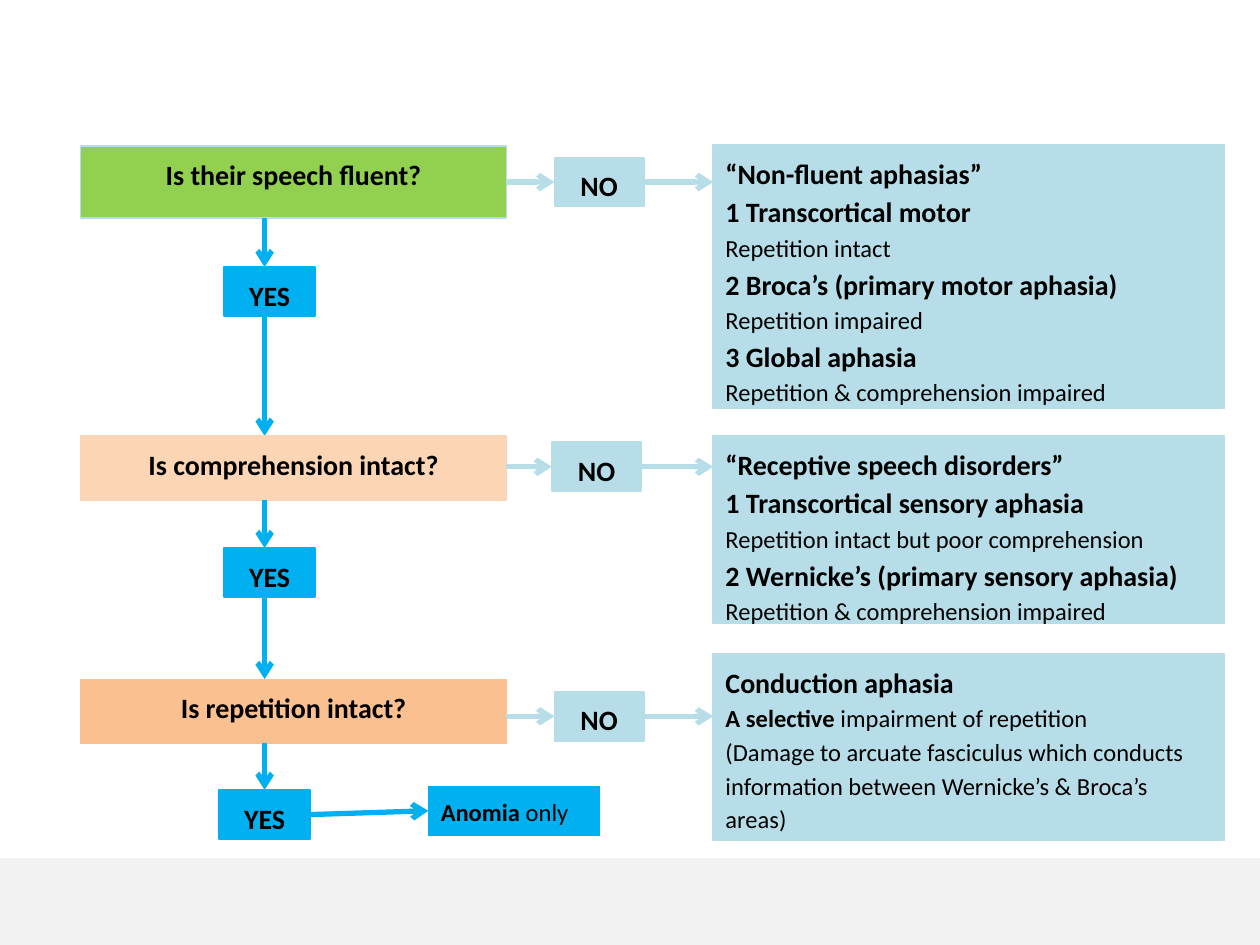
from dataclasses import dataclass

from lxml import etree
from pptx import Presentation
from pptx.dml.color import RGBColor
from pptx.enum import shapes, text
from pptx.oxml import ns
from pptx.util import Inches, Pt


@dataclass(frozen=True)
class Theme:
    font: str = "Calibri"
    ink: str = "000000"
    band: str = "F2F2F2"
    no: str = "B7DEE8"
    yes: str = "00B0F0"
    head: int = 16
    detail: int = 14
    arrow: int = 3
    spacing: float = 1.15


THEME = Theme()
TOP, LEFT, RIGHT = 0, 1, 3
QUESTION_X, QUESTION_W = 0.64, 3.38
OUTCOME_X, OUTCOME_W = 5.66, 4.06
NO_W, YES_W, ANSWER_H = 0.71, 0.72, 0.39
SPINE_X = 2.1


def head(words):
    return [(words, THEME.head, True)]


def detail(words):
    return [(words, THEME.detail, False)]


# text, top, height, fill, line, NO left, NO top, YES left, YES top
QUESTIONS = [
    ("Is their speech fluent?", 1.16, 0.57, "92D050", THEME.no, 4.4, 1.25, 1.78, 2.12),
    ("Is comprehension intact?", 3.46, 0.51, "FCD5B5", "FCD5B5", 4.38, 3.51, 1.78, 4.35),
    ("Is repetition intact?", 5.39, 0.51, "FAC090", "FAC090", 4.4, 5.49, 1.74, 6.27),
]

# top, height, paragraphs
OUTCOMES = [
    (1.15, 2.09, [
        head("“Non-fluent aphasias”"),
        head("1 Transcortical motor"),
        detail("Repetition intact"),
        head("2 Broca’s (primary motor aphasia)"),
        detail("Repetition impaired"),
        head("3 Global aphasia"),
        detail("Repetition & comprehension impaired"),
    ]),
    (3.46, 1.49, [
        head("“Receptive speech disorders”"),
        head("1 Transcortical sensory aphasia"),
        detail("Repetition intact but poor comprehension"),
        head("2 Wernicke’s (primary sensory aphasia)"),
        detail("Repetition & comprehension impaired"),
    ]),
    (5.19, 1.48, [
        head("Conduction aphasia"),
        [("A selective ", THEME.detail, True),
         ("impairment of repetition", THEME.detail, False)],
        detail("(Damage to arcuate fasciculus which conducts information "
               "between Wernicke’s & Broca’s areas)"),
    ]),
]


def rgb(value):
    return RGBColor.from_string(value)


def add_box(s, box, fill, paragraphs=(), line=None, width=0.75, centred=False):
    """Add a filled rectangle; each paragraph is a list of (text, size, bold)."""
    sp = s.shapes.add_shape(shapes.MSO_SHAPE.RECTANGLE, *map(Inches, box))
    sp.shadow.inherit = False
    sp.fill.solid()
    sp.fill.fore_color.rgb = rgb(fill)
    sp.line.color.rgb = rgb(line or fill)
    sp.line.width = Pt(width)
    tf = sp.text_frame
    tf.word_wrap = True
    tf.vertical_anchor = text.MSO_ANCHOR.TOP
    for i, runs in enumerate(paragraphs):
        p = tf.add_paragraph() if i else tf.paragraphs[0]
        p.alignment = text.PP_ALIGN.CENTER if centred else text.PP_ALIGN.LEFT
        p.line_spacing = THEME.spacing
        for words, size, bold in runs:
            r = p.add_run()
            r.text = words
            r.font.color.rgb = rgb(THEME.ink)
            style = {"name": THEME.font, "size": Pt(size), "bold": bold}
            for name, value in style.items():
                setattr(r.font, name, value)
    return sp


def add_arrow(s, start, end, color, begin_at=None, end_at=None):
    """Add an arrow; begin_at and end_at are (shape, side) joins."""
    c = s.shapes.add_connector(shapes.MSO_CONNECTOR.STRAIGHT,
                               *map(Inches, (*start, *end)))
    c.line.color.rgb = rgb(color)
    c.line.width = Pt(THEME.arrow)
    etree.SubElement(c.line._get_or_add_ln(), ns.qn("a:tailEnd"), type="arrow")
    etree.SubElement(c._element.spPr, ns.qn("a:effectLst"))
    if begin_at:
        c.begin_connect(*begin_at)
    if end_at:
        c.end_connect(*end_at)


def add_answer(s, words, x, y, w, color):
    return add_box(s, (x, y, w, ANSWER_H), color, [head(words)], width=1, centred=True)


def add_no_branch(s, x, y):
    no = add_answer(s, "NO", x, y, NO_W, THEME.no)
    middle = y + ANSWER_H / 2
    add_arrow(s, (QUESTION_X + QUESTION_W, middle), (x, middle), THEME.no,
              end_at=(no, LEFT))
    add_arrow(s, (x + NO_W, middle), (OUTCOME_X, middle), THEME.no,
              begin_at=(no, RIGHT))


def add_yes_branch(s, x, y, question_bottom, next_top):
    """Add YES below its question and, if there is one, lead to the next."""
    yes = add_answer(s, "YES", x, y, YES_W, THEME.yes)
    on_spine = abs(x + YES_W / 2 - SPINE_X) < 0.01
    add_arrow(s, (SPINE_X, question_bottom), (SPINE_X, y), THEME.yes,
              end_at=(yes, TOP) if on_spine else None)
    if next_top:
        add_arrow(s, (SPINE_X, y + ANSWER_H), (SPINE_X, next_top), THEME.yes)
    return yes


def main():
    prs = Presentation()
    prs.slide_width, prs.slide_height = Inches(10), Inches(7.5)
    s = prs.slides.add_slide(prs.slide_layouts[6])
    band = add_box(s, (0, 6.81, 10, 0.69), THEME.band)
    band.line.fill.background()

    for top, height, paragraphs in OUTCOMES:
        add_box(s, (OUTCOME_X, top, OUTCOME_W, height), THEME.no, paragraphs)

    next_tops = [q[1] for q in QUESTIONS[1:]] + [None]
    for question, next_top in zip(QUESTIONS, next_tops):
        words, top, height, fill, line, no_x, no_y, yes_x, yes_y = question
        add_box(s, (QUESTION_X, top, QUESTION_W, height), fill, [head(words)],
                line, centred=True)
        add_no_branch(s, no_x, no_y)
        last_yes = add_yes_branch(s, yes_x, yes_y, top + height, next_top)

    anomia = add_box(s, (3.4, 6.24, 1.36, ANSWER_H), THEME.yes,
                     [[("Anomia ", THEME.detail, True), ("only", THEME.detail, False)]])
    add_arrow(s, (2.46, 6.46), (3.4, 6.44), THEME.yes, (last_yes, RIGHT), (anomia, LEFT))
    prs.save("out.pptx")


if __name__ == "__main__":
    main()
